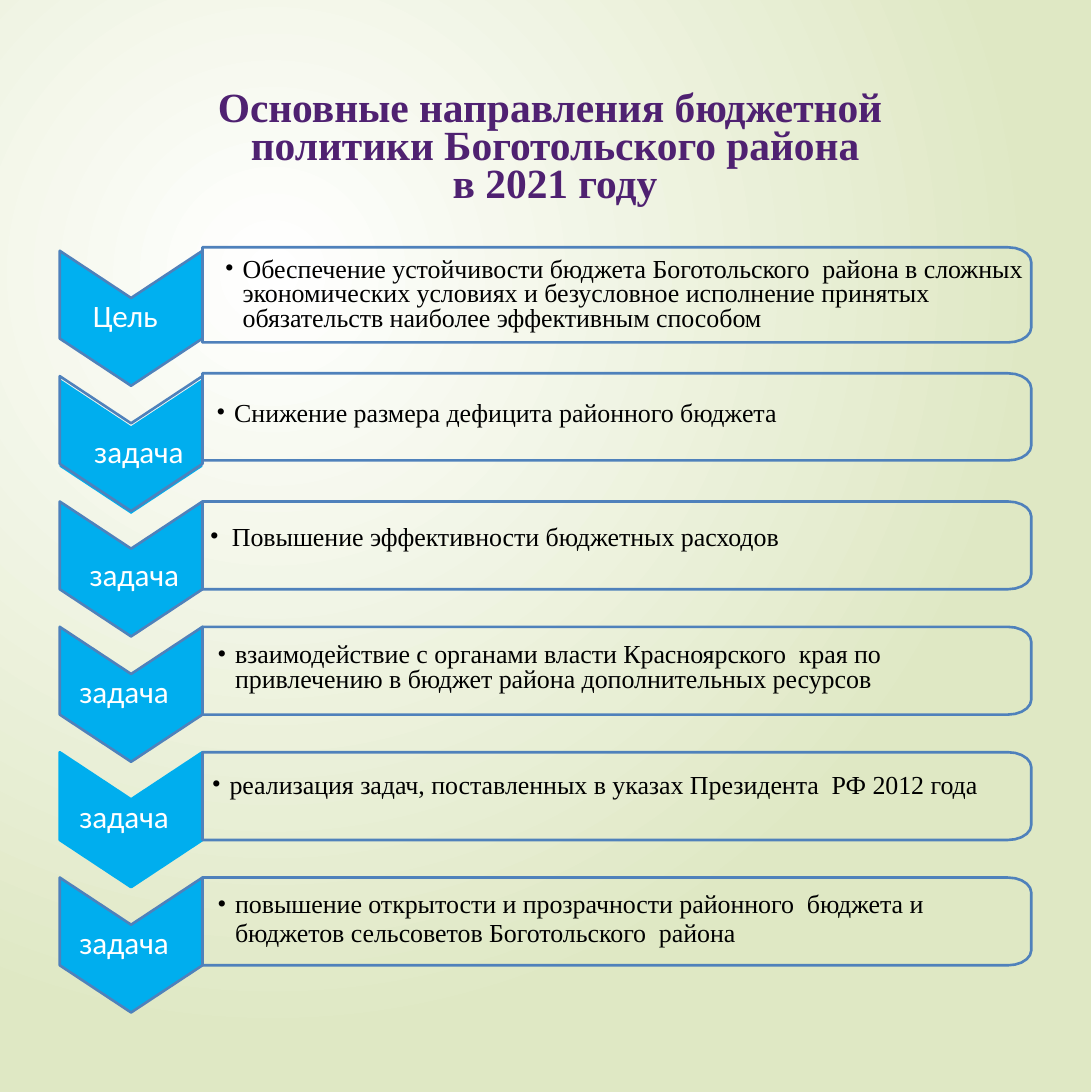
import math
from dataclasses import dataclass
from typing import Any

from pptx import Presentation
from pptx import util as u
from pptx.dml.color import RGBColor
from pptx.enum import text as t
from pptx.oxml import parse_xml
from pptx.oxml.ns import nsdecls, qn

HEX = {"violet": "4F2171", "edge": "4F81BB", "sky": "00B0F0", "blue": "00AEEE",
       "black": "000000", "white": "FFFFFF", "green": "DFE8C4"}
SERIF, SANS = "Times New Roman", "Calibri"

# All lengths are points.
TOP, STEP = 193.5, 96.7
LEFT, RIGHT, END = 46.1, 156.2, 795.6
NOTCH, SIDE = 36.4, 67.7
ROUND_X, ROUND_Y, TURNS = 18, 11.5, 5

Point = tuple[float, float]


@dataclass
class Row:
    label: str
    spot: Point  # left and top of the label
    words: str
    box: tuple[float, float, float, float]
    lead: float  # line spacing: points, or a share of the line below 2
    gap: float  # top inset and space before
    hang: float = 13.7
    fill: str = "blue"
    rim: str = "edge"
    drop: float = 0  # shift of the filled arrow
    rise: float = 0  # shift of the panel above the arrow
    tall: float = SIDE


ROWS = [
    Row("Цель", (71, 227.5),
        "Обеспечение устойчивости бюджета Боготольского  района в сложных "
        "экономических условиях и безусловное исполнение принятых "
        "обязательств наиболее эффективным способом",
        (172.8, 197.3, 629.3, 60.5), 18.7, 2.9, fill="sky", rise=2.7, tall=73.4),
    Row("задача", (72, 332.9), "Снижение размера дефицита районного бюджета",
        (166.3, 311.8, 642.2, 19.4), 17.4, 0.8, drop=2.2, rise=2.2, tall=67.2),
    Row("задача", (68.4, 427.8), "Повышение эффективности бюджетных расходов",
        (161.2, 405.8, 535, 20.9), 18.7, 0.8, hang=17),
    Row("задача", (60.5, 517.7),
        "взаимодействие с органами власти Красноярского  края по "
        "привлечению в бюджет района дополнительных ресурсов",
        (167, 494.6, 602.6, 41.8), 18.7, 2.9),
    Row("задача", (60.5, 614.6),
        "реализация задач, поставленных в указах Президента  РФ 2012 года",
        (162.7, 594.7, 611.3, 23), 19.7, 2.2, rim="blue"),
    Row("задача", (60.5, 711.4),
        "повышение открытости и прозрачности районного  бюджета и "
        "бюджетов сельсоветов Боготольского  района",
        (167, 684.4, 615.6, 47.5), 0.92, 2.8),
]


def shade(name: str) -> RGBColor:
    return RGBColor.from_string(HEX[name])


def put(item: Any, vals: dict[str, Any]) -> None:
    for key, val in vals.items():
        setattr(item, key, val)


def place(item: Any, box: tuple[float, float, float, float]) -> None:
    put(item, dict(zip(("left", "top", "width", "height"), map(u.Pt, box))))


def frame(item: Any, inset: float) -> Any:
    body = item.text_frame
    put(body, {"word_wrap": True, "auto_size": t.MSO_AUTO_SIZE.NONE,
               "vertical_anchor": t.MSO_ANCHOR.TOP, "margin_left": 0,
               "margin_right": 0, "margin_bottom": 0, "margin_top": u.Pt(inset)})
    return body


def write(para: Any, words: str, font: dict[str, Any], tint: str,
          form: dict[str, Any], inset: float = 0, hang: float = 0) -> None:
    put(para, form)
    run = para.add_run()
    run.text = words
    put(run.font, font)
    run.font.color.rgb = shade(tint)
    run._r.get_or_add_rPr().set("spc", "-5")
    props = para._p.get_or_add_pPr()
    props.set("marL", str(u.Pt(inset)))
    props.set("indent", str(-u.Pt(hang)))
    if hang:
        props.append(parse_xml(f'<a:buFont {nsdecls("a")} typeface="{SERIF}"/>'))
        props.append(parse_xml(f'<a:buChar {nsdecls("a")} char="•"/>'))
    else:
        props.append(parse_xml(f'<a:buNone {nsdecls("a")}/>'))


def arrow(top: float) -> list[Point]:
    mid = (LEFT + RIGHT) / 2
    return [(RIGHT, top), (RIGHT, top + SIDE), (mid, top + SIDE + NOTCH),
            (LEFT, top + SIDE), (LEFT, top), (mid, top + NOTCH)]


def panel(top: float, tall: float) -> list[Point]:
    """Outline a box with elliptic corners on its right side."""
    turn = [(END - ROUND_X * (1 - math.sin(a)), ROUND_Y * (1 - math.cos(a)))
            for a in (math.pi / 2 * i / TURNS for i in range(TURNS + 1))]
    return ([(RIGHT, top)] + [(x, top + y) for x, y in turn]
            + [(x, top + tall - y) for x, y in reversed(turn)] + [(RIGHT, top + tall)])


def draw(slide: Any, loops: list[list[Point]], fill: str = "", line: str = "") -> None:
    paths = [[(u.Pt(x), u.Pt(y)) for x, y in loop] for loop in loops]
    pen = slide.shapes.build_freeform(*paths[0][0], scale=1.0)
    for num, pts in enumerate(paths):
        if num:
            pen.move_to(*pts[0])
        pen.add_line_segments(pts[1:], close=True)
    shape = pen.convert_to_shape()
    shape.shadow.inherit = False
    for part, tint in ((shape.fill, fill), (shape.line.fill, line)):
        if tint:
            part.solid()
            part.fore_color.rgb = shade(tint)
        else:
            part.background()
    if line:
        shape.line.width = u.Pt(2)


def paint(slide: Any) -> None:
    """Fill the background with a round glow around the upper left quarter."""
    fill = slide.background.fill
    fill.gradient()
    for stop, tint in zip(fill.gradient_stops, ("white", "green")):
        stop.color.rgb = shade(tint)
    grad = slide._element.find(".//" + qn("a:gradFill"))
    grad.remove(grad.find(qn("a:lin")))
    grad.append(parse_xml(f'<a:path {nsdecls("a")} path="circle"><a:fillToRect '
                          'l="50000" t="50000" r="100000" b="100000"/></a:path>'))


def head(title: Any) -> None:
    place(title, (112.3, 67.7, 617, 92.9))
    body = frame(title, 2.9)
    font = {"name": SERIF, "size": u.Pt(32), "bold": True}
    lines = [("Основные направления бюджетной  политики Боготольского района", 30, 2.9),
             ("в 2021 году", 28.8, 0)]
    for num, (words, lead, gap) in enumerate(lines):
        para = body.add_paragraph() if num else body.paragraphs[0]
        write(para, words, font, "violet",
              {"alignment": t.PP_ALIGN.CENTER, "line_spacing": u.Pt(lead),
               "space_before": u.Pt(gap)}, inset=14.8)


def band(slide: Any, row: Row, top: float, item: Any) -> None:
    draw(slide, [arrow(top + row.drop)], fill=row.fill)
    rims = [arrow(top), panel(top - row.rise, row.tall)]
    if row.rim == "edge":
        draw(slide, rims, line="edge")
    else:
        for rim, tint in zip(rims, (row.rim, "edge")):
            draw(slide, [rim], line=tint)
    tag = slide.shapes.add_textbox(0, 0, 0, 0)
    place(tag, (*row.spot, 80, 31))
    write(frame(tag, 0.8).paragraphs[0], row.label,
          {"name": SANS, "size": u.Pt(24)}, "white",
          {"space_before": u.Pt(1)}, inset=0.7)
    place(item, row.box)
    lead = row.lead if row.lead < 2 else u.Pt(row.lead)
    write(frame(item, row.gap).paragraphs[0], row.words,
          {"name": SERIF, "size": u.Pt(20)}, "black",
          {"line_spacing": lead, "space_before": u.Pt(row.gap)},
          inset=row.hang + 0.7, hang=row.hang)


def main() -> None:
    deck = Presentation()
    put(deck, {"slide_width": u.Pt(841.7), "slide_height": u.Pt(842.4)})
    slide = deck.slides.add_slide(deck.slide_layouts[1])
    paint(slide)
    head(slide.shapes.title)
    for num, row in enumerate(ROWS):
        item = slide.shapes.add_textbox(0, 0, 0, 0) if num else slide.placeholders[1]
        band(slide, row, TOP + STEP * num, item)
    deck.save("out.pptx")


if __name__ == "__main__":
    main()
